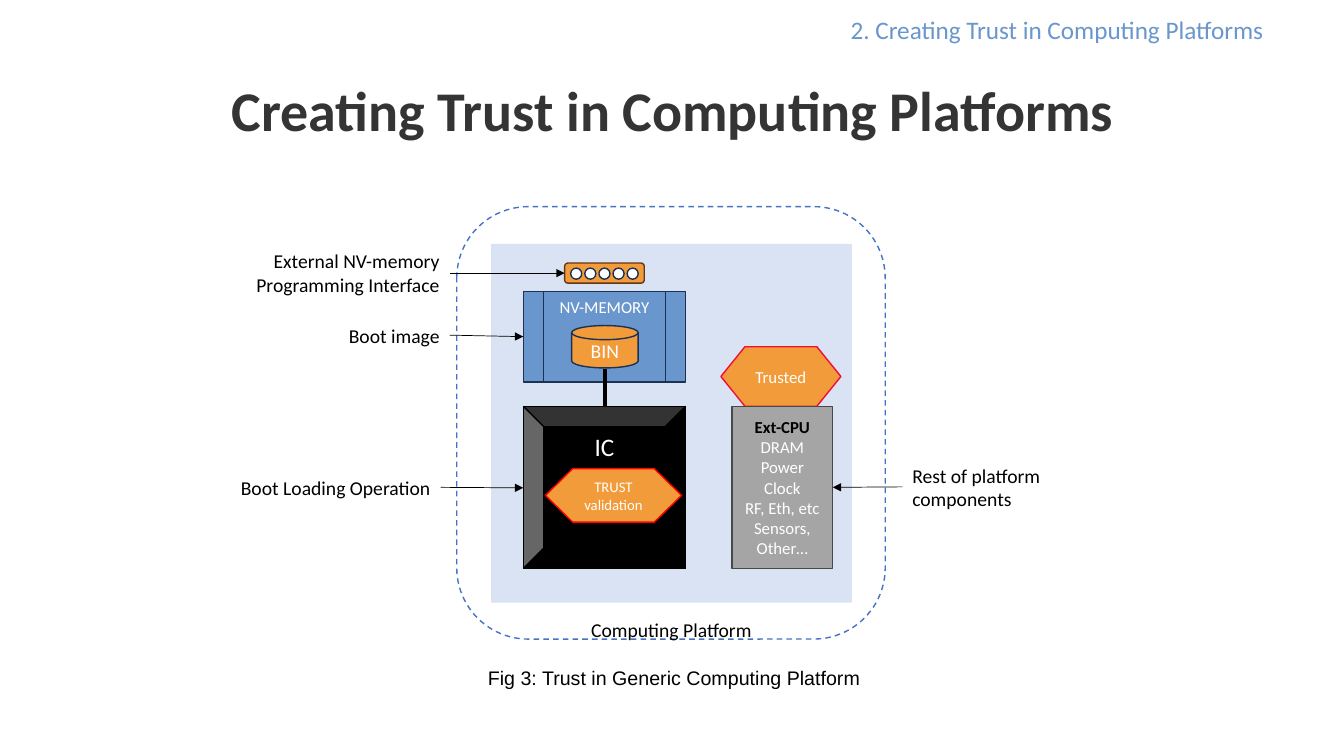
from lxml import etree
from pptx import Presentation
from pptx.dml.color import RGBColor
from pptx.enum.dml import MSO_LINE
from pptx.enum.shapes import MSO_CONNECTOR, MSO_SHAPE
from pptx.enum.text import MSO_ANCHOR, PP_ALIGN
from pptx.oxml.ns import qn
from pptx.util import Inches, Pt

RECT, ROUND, OVAL = MSO_SHAPE.RECTANGLE, MSO_SHAPE.ROUNDED_RECTANGLE, MSO_SHAPE.OVAL
HEXAGON = MSO_SHAPE.FLOWCHART_PREPARATION
MEMORY = MSO_SHAPE.FLOWCHART_PREDEFINED_PROCESS
DISK, BEVEL = MSO_SHAPE.FLOWCHART_MAGNETIC_DISK, MSO_SHAPE.BEVEL
STRAIGHT, DASH = MSO_CONNECTOR.STRAIGHT, MSO_LINE.DASH
LEFT, CENTER, RIGHT = PP_ALIGN.LEFT, PP_ALIGN.CENTER, PP_ALIGN.RIGHT
TOP, MIDDLE = MSO_ANCHOR.TOP, MSO_ANCHOR.MIDDLE
LEFT_SIDE, RIGHT_SIDE = 1, 3

BLACK = RGBColor(0x00, 0x00, 0x00)
WHITE = RGBColor(0xFF, 0xFF, 0xFF)
CHARCOAL = RGBColor(0x34, 0x34, 0x34)
PALE_BLUE = RGBColor(0xDA, 0xE3, 0xF3)
BLUE = RGBColor(0x69, 0x96, 0xCC)
DASH_BLUE = RGBColor(0x44, 0x72, 0xC4)
NAVY = RGBColor(0x1D, 0x31, 0x55)
ORANGE = RGBColor(0xF2, 0x9B, 0x3B)
BROWN = RGBColor(0x67, 0x36, 0x15)
GRAY = RGBColor(0xA5, 0xA5, 0xA5)
DARK_GRAY = RGBColor(0x48, 0x48, 0x48)
CRIMSON = RGBColor(0xF0, 0x0E, 0x37)
RED = RGBColor(0xFF, 0x00, 0x00)


class Diagram:
    def __init__(self, s, font="Calibri"):
        self.s = s
        self.font = font

    def set_text(self, sp, text, size=14, color=BLACK, bold=False, align=CENTER,
                 anchor=MIDDLE, font=None, spacing=None):
        """Fill a shape with text, one paragraph per line."""
        tf = sp.text_frame
        tf.word_wrap = True
        tf.vertical_anchor = anchor
        for i, line in enumerate(text.split("\n")):
            p = tf.add_paragraph() if i else tf.paragraphs[0]
            p.alignment = align
            if spacing:
                p.line_spacing = spacing
            r = p.add_run()
            r.text = line
            r.font.name = font or self.font
            r.font.size = Pt(size)
            r.font.bold = bold
            r.font.color.rgb = color

    def text(self, x, y, w, h, text, anchor=TOP, **style):
        sp = self.s.shapes.add_textbox(Inches(x), Inches(y), Inches(w), Inches(h))
        self.set_text(sp, text, anchor=anchor, **style)
        return sp

    def shape(self, kind, x, y, w, h, fill=None, line=None, dash=None,
              text=None, parent=None, **style):
        shapes = (parent or self.s).shapes
        sp = shapes.add_shape(kind, Inches(x), Inches(y), Inches(w), Inches(h))
        sp.shadow.inherit = False
        if fill is None:
            sp.fill.background()
        else:
            sp.fill.solid()
            sp.fill.fore_color.rgb = fill
        if line is None:
            sp.line.fill.background()
        else:
            sp.line.color.rgb = line
            sp.line.width = Pt(1)
            if dash:
                sp.line.dash_style = dash
        if text:
            self.set_text(sp, text, color=WHITE, **style)
        return sp

    def line(self, x1, y1, x2, y2, width, arrow=False):
        c = self.s.shapes.add_connector(STRAIGHT, Inches(x1), Inches(y1),
                                        Inches(x2), Inches(y2))
        c.line.color.rgb = BLACK
        c.line.width = Pt(width)
        properties = c._element.spPr
        if arrow:
            etree.SubElement(properties.find(qn("a:ln")), qn("a:tailEnd"), type="triangle")
        etree.SubElement(properties, qn("a:effectLst"))
        return c


def main():
    prs = Presentation()
    prs.slide_width, prs.slide_height = Inches(13.33), Inches(7.5)
    s = prs.slides.add_slide(prs.slide_layouts[6])
    d = Diagram(s)

    d.text(6.02, 0.09, 6.61, 0.4, "2. Creating Trust in Computing Platforms",
           size=18, color=BLUE, align=RIGHT)
    d.text(0.92, 0.4, 11.5, 1.45, "Creating Trust in Computing Platforms",
           size=40, color=CHARCOAL, bold=True, anchor=MIDDLE, spacing=0.9)

    # Platform and programming interface
    d.shape(RECT, 4.87, 2.42, 3.58, 3.56, PALE_BLUE)
    interface = d.shape(ROUND, 5.6, 2.61, 0.79, 0.2, ORANGE, BROWN)
    pins = s.shapes.add_group_shape()
    for i in range(5):
        d.shape(OVAL, 5.66 + 0.14 * i, 2.66, 0.11, 0.11, WHITE, NAVY, parent=pins)
    d.shape(ROUND, 4.53, 2.05, 4.25, 4.29, line=DASH_BLUE, dash=DASH)
    d.text(5.63, 6.08, 2.06, 0.33, "Computing Platform")

    # Components
    d.shape(HEXAGON, 7.15, 3.44, 1.19, 0.59, ORANGE, CRIMSON, text="Trusted", size=12)
    memory = d.shape(MEMORY, 5.19, 2.89, 1.61, 0.9, BLUE, NAVY,
                     text="NV-MEMORY", size=12, anchor=TOP)
    cpu = d.shape(RECT, 7.26, 4.03, 1, 1.61, GRAY, DARK_GRAY, size=12,
                  text="Ext-CPU\nDRAM\nPower\nClock\nRF, Eth, etc\nSensors,\nOther…")
    heading = cpu.text_frame.paragraphs[0].runs[0].font
    heading.bold = True
    heading.color.rgb = BLACK
    d.line(6, 3.66, 6, 4.19, 2.25)
    d.shape(BEVEL, 5.19, 4.03, 1.61, 1.61, BLACK, BLACK, text="IC", size=18, anchor=TOP)
    d.shape(DISK, 5.67, 3.23, 0.66, 0.42, ORANGE, NAVY, text="BIN")
    d.shape(HEXAGON, 5.41, 4.65, 1.35, 0.53, ORANGE, RED,
            text="TRUST\nvalidation", size=10.5)

    # Labels and their arrows
    external = d.text(2.4, 2.42, 2.06, 0.58,
                      "External NV-memory Programming Interface", align=RIGHT)
    image = d.text(2.4, 3.16, 2.06, 0.33, "Boot image", align=RIGHT)
    loading = d.text(2.2, 4.67, 2.17, 0.33, "Boot Loading Operation", align=RIGHT)
    rest = d.text(8.95, 4.55, 2.06, 0.56, "Rest of platform components", align=LEFT)
    for label, target in ((external, interface), (image, memory)):
        arrow = d.line(4.46, 3, 5.19, 3, 0.5, arrow=True)
        arrow.begin_connect(label, RIGHT_SIDE)
        arrow.end_connect(target, LEFT_SIDE)
    arrow = d.line(4.37, 4.84, 5.19, 4.84, 0.5, arrow=True)
    arrow.begin_connect(loading, RIGHT_SIDE)
    arrow = d.line(8.95, 4.84, 8.26, 4.84, 0.5, arrow=True)
    arrow.begin_connect(rest, LEFT_SIDE)
    arrow.end_connect(cpu, RIGHT_SIDE)

    d.text(4.74, 6.56, 4.19, 0.34, "Fig 3: Trust in Generic Computing Platform",
           font="Arial", align=LEFT)
    prs.save("out.pptx")


if __name__ == "__main__":
    main()
